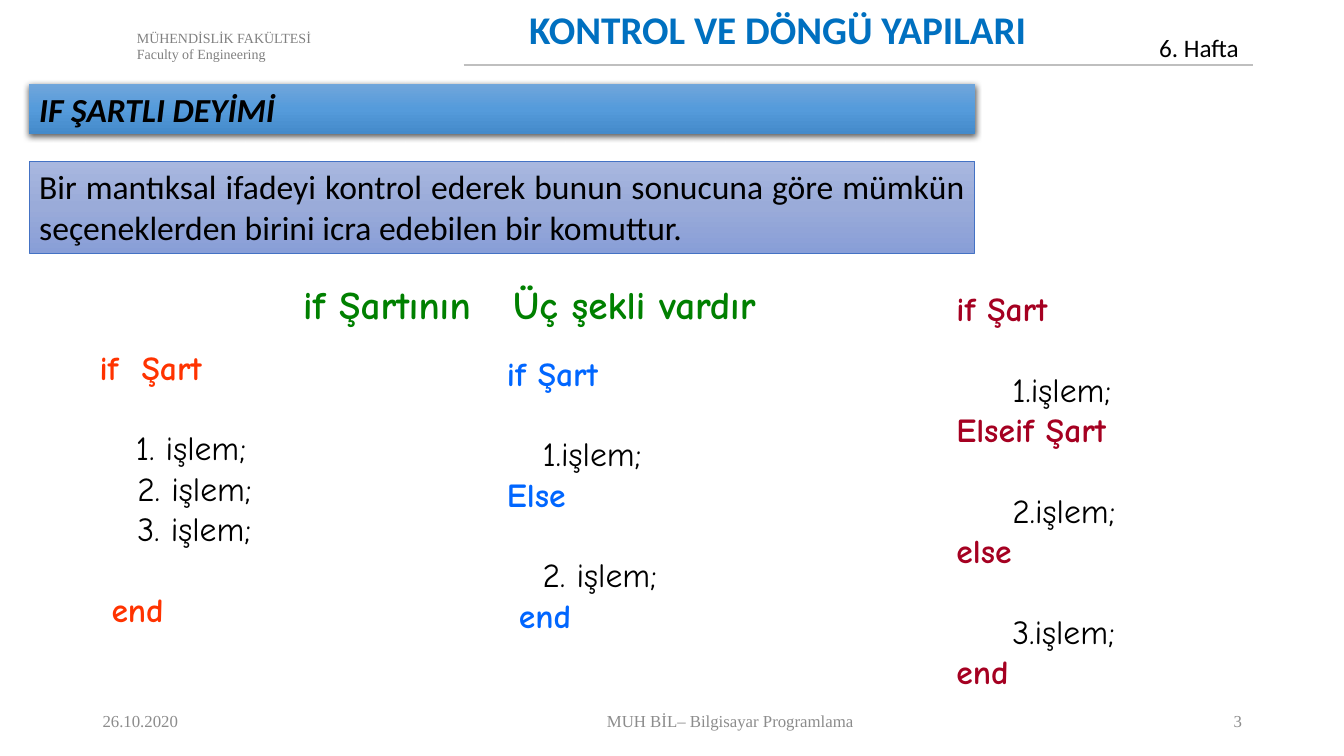
"""Build the slide on the forms of the if statement."""
from copy import deepcopy

from lxml import etree
from pptx import Presentation
from pptx.dml.color import RGBColor
from pptx.enum.shapes import MSO_CONNECTOR, MSO_SHAPE
from pptx.enum.text import MSO_ANCHOR, PP_ALIGN
from pptx.oxml.ns import qn
from pptx.util import Pt

LEFT, CENTER, RIGHT, JUSTIFY = PP_ALIGN.LEFT, PP_ALIGN.CENTER, PP_ALIGN.RIGHT, PP_ALIGN.JUSTIFY
TOP, MIDDLE = MSO_ANCHOR.TOP, MSO_ANCHOR.MIDDLE
RECTANGLE, STRAIGHT = MSO_SHAPE.RECTANGLE, MSO_CONNECTOR.STRAIGHT

BLACK = RGBColor(0x00, 0x00, 0x00)
HEADER_GREY = RGBColor(0x80, 0x80, 0x80)
FOOTER_GREY = RGBColor(0x8C, 0x8C, 0x8C)
RULE_GREY = RGBColor(0xBF, 0xBF, 0xBF)
TITLE_BLUE = RGBColor(0x00, 0x70, 0xC0)
BORDER_BLUE = RGBColor(0x44, 0x72, 0xC4)
GREEN = RGBColor(0x00, 0x80, 0x00)
ORANGE = RGBColor(0xFF, 0x33, 0x00)
BLUE = RGBColor(0x00, 0x66, 0xFF)
CRIMSON = RGBColor(0xA5, 0x00, 0x21)
DEFINITION_FILL = [RGBColor(0xA8, 0xB7, 0xDF), RGBColor(0x9A, 0xAB, 0xD9), RGBColor(0x88, 0x9E, 0xD7)]
BANNER_FILL = [RGBColor(0x71, 0xA6, 0xDB), RGBColor(0x55, 0x9B, 0xDB), RGBColor(0x44, 0x8A, 0xCA)]

SANS, SERIF, COMIC = "Calibri", "Times New Roman", "Comic Neue"
CODE_LINE = 28.8


def write(paragraph, text, font=SANS, size=24, color=BLACK, bold=False, italic=False,
          align=LEFT, left=0, hanging=0, before=0):
    """Fill a paragraph with formatted text."""
    properties = paragraph._p.get_or_add_pPr()
    properties.set("marL", str(Pt(left)))
    properties.set("indent", str(Pt(-hanging)))
    paragraph.alignment = align
    paragraph.space_before = Pt(before)
    run = paragraph.add_run()
    run.text = text
    run.font.name = font
    run.font.size = Pt(size)
    run.font.bold = bold
    run.font.italic = italic
    run.font.color.rgb = color


class SlideBuilder:
    """Holds the current slide and draws its elements in one style."""

    def __init__(self, slide):
        self.slide = slide

    def title(self, text, box, **style):
        """Place and format the title placeholder."""
        shape = self.slide.shapes.title
        shape.left, shape.top, shape.width, shape.height = map(Pt, box)
        shape.text_frame.vertical_anchor = TOP
        write(shape.text_frame.paragraphs[0], text, **style)

    def text(self, lines, box, anchor=TOP, **style):
        """Add a text box with (text, own style) lines."""
        frame = self.slide.shapes.add_textbox(*map(Pt, box)).text_frame
        frame.word_wrap = True
        frame.vertical_anchor = anchor
        for number, (line, own_style) in enumerate(lines):
            paragraph = frame.add_paragraph() if number else frame.paragraphs[0]
            write(paragraph, line, **{**style, **own_style})

    def code(self, lines, box, color):
        """Add pseudocode given as (text, indent, is_step, follows_gap) lines."""
        styled = [(text, {"left": indent, "bold": not is_step,
                          "color": BLACK if is_step else color,
                          "before": CODE_LINE if follows_gap else 0})
                  for text, indent, is_step, follows_gap in lines]
        if "\t" in lines[0][0]:
            styled[0][1]["hanging"] = lines[0][1]
        self.text(styled, box, font=COMIC)

    def panel(self, text, box, colors, border=None, shadow=False, **style):
        """Add a rectangle with a vertical three-colour gradient."""
        shape = self.slide.shapes.add_shape(RECTANGLE, *map(Pt, box))
        shape.fill.gradient()
        shape.fill.gradient_angle = 270
        stop_list = shape._element.spPr.find(qn("a:gradFill")).find(qn("a:gsLst"))
        stop_list.insert(1, deepcopy(stop_list[0]))
        for number, (stop, color) in enumerate(zip(shape.fill.gradient_stops, colors)):
            stop.position = number / 2
            stop.color.rgb = color
        if border:
            shape.line.color.rgb = border
            shape.line.width = Pt(0.5)
        else:
            shape.line.fill.background()
        shape.shadow.inherit = False
        if shadow:
            effects = shape._element.spPr.find(qn("a:effectLst"))
            outer = etree.SubElement(effects, qn("a:outerShdw"), blurRad=str(Pt(4.5)),
                                     dist=str(Pt(1.5)), dir="5400000", rotWithShape="0")
            shade = etree.SubElement(outer, qn("a:srgbClr"), val=str(BLACK))
            etree.SubElement(shade, qn("a:alpha"), val="63000")
        shape.text_frame.word_wrap = True
        shape.text_frame.vertical_anchor = TOP
        write(shape.text_frame.paragraphs[0], text, align=JUSTIFY, **style)

    def rule(self, left, right, top):
        """Add a horizontal line."""
        line = self.slide.shapes.add_connector(STRAIGHT, Pt(left), Pt(top), Pt(right), Pt(top))
        line.line.color.rgb = RULE_GREY
        line.line.width = Pt(1.5)
        etree.SubElement(line._element.spPr, qn("a:effectLst"))


def main():
    """Build and save the presentation."""
    presentation = Presentation()
    presentation.slide_width, presentation.slide_height = Pt(960), Pt(540)
    builder = SlideBuilder(presentation.slides.add_slide(presentation.slide_layouts[5]))

    builder.rule(331.2, 895, 46.3)
    builder.text([("MÜHENDİSLİK FAKÜLTESİ", {}), ("Faculty of Engineering", {})],
                 (90.7, 17.3, 480, 31.7), font=SERIF, size=10, color=HEADER_GREY)
    builder.text([("6. Hafta", {})], (820.8, 19.4, 72.7, 28.8), size=18)
    builder.title("KONTROL VE DÖNGÜ YAPILARI", (370.8, 0, 398.2, 41),
                  size=28, color=TITLE_BLUE, bold=True)

    for text, left, width, align in (("26.10.2020", 66.2, 113, LEFT),
                                     ("MUH BİL– Bilgisayar Programlama", 196.6, 650.2, CENTER),
                                     ("3", 861.8, 32.4, RIGHT)):
        builder.text([(text, {})], (left, 500.4, width, 28.8), anchor=MIDDLE,
                     font=SERIF, size=12, color=FOOTER_GREY, align=align)

    builder.panel("Bir mantıksal ifadeyi kontrol ederek bunun sonucuna göre mümkün "
                  "seçeneklerden birini icra edebilen bir komuttur.",
                  (20.9, 115.2, 675.4, 65.5), DEFINITION_FILL, border=BORDER_BLUE)
    builder.panel("IF ŞARTLI DEYİMİ", (20.9, 59.8, 675.4, 36), BANNER_FILL,
                  shadow=True, bold=True, italic=True)

    builder.text([("if Şartının\tÜç şekli vardır", {"left": 150, "hanging": 150})],
                 (209.5, 182.9, 411.1, 67.7), anchor=MIDDLE,
                 font=COMIC, size=28, color=GREEN, bold=True)
    builder.code([("if\tŞart", 30, False, False), ("1. işlem;", 26, True, True),
                  ("2. işlem;", 27, True, False), ("3. işlem;", 27, True, False),
                  ("end", 8.5, False, True)],
                 (64.1, 244.1, 153.4, 187.2), ORANGE)
    builder.code([("if Şart", 0, False, False), ("1.işlem;", 25.5, True, True),
                  ("Else", 0, False, False), ("2. işlem;", 25.5, True, True),
                  ("end", 8.5, False, False)],
                 (355, 248.4, 152.6, 211), BLUE)
    builder.code([("if Şart", 0, False, False), ("1.işlem;", 40, True, True),
                  ("Elseif Şart", 0, False, False), ("2.işlem;", 40, True, True),
                  ("else", 0, False, False), ("3.işlem;", 40, True, True),
                  ("end", 0, False, False)],
                 (676.1, 202.3, 163.4, 298), CRIMSON)
    presentation.save("out.pptx")


if __name__ == "__main__":
    main()
